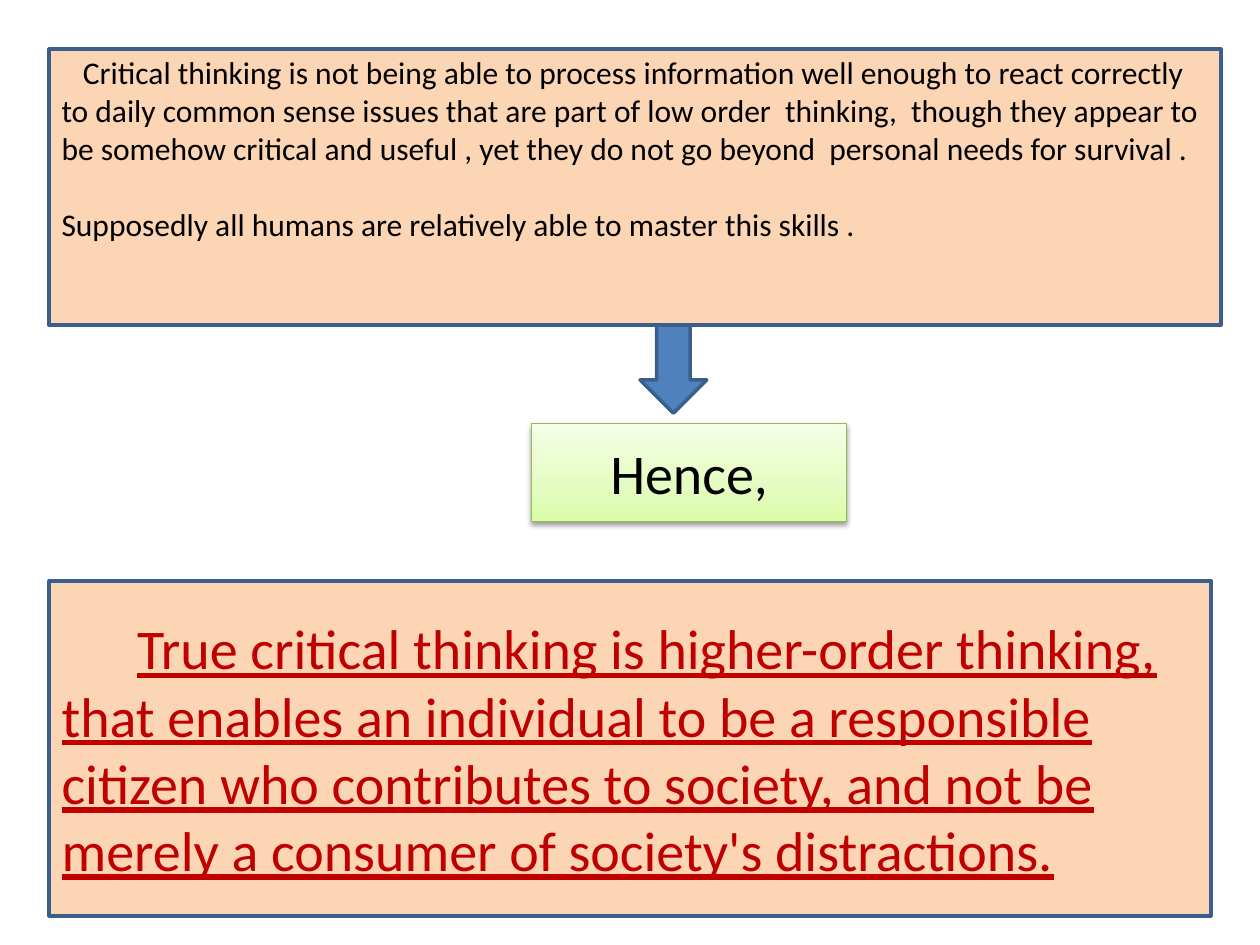
import copy

import pptx
import pptx.dml.color
import pptx.enum.shapes
import pptx.enum.text
import pptx.oxml
import pptx.oxml.ns
import pptx.util

Inches = pptx.util.Inches
Pt = pptx.util.Pt
SHAPES = pptx.enum.shapes.MSO_SHAPE
ALIGN = pptx.enum.text.PP_ALIGN
ANCHOR = pptx.enum.text.MSO_ANCHOR

COLORS = {
    "peach": "FCD5B5", "navy": "3A5F8C", "blue": "4F81BD",
    "green_line": "98B955", "black": "000000", "red": "C00000",
}
GREEN_STOPS = [(0, "DAFDA7"), (0.35, "E4FCC2"), (1, "F5FFE7")]


def rgb(value):
    return pptx.dml.color.RGBColor.from_string(value)


class SlideBuilder:
    def __init__(self, slide, font="Calibri"):
        self.slide = slide
        self.font = font

    def block(self, kind, place, fill=None, line="navy", weight=2):
        shape = self.slide.shapes.add_shape(kind, *map(Inches, place))
        shape.shadow.inherit = False
        if fill:
            shape.fill.solid()
            shape.fill.fore_color.rgb = rgb(COLORS[fill])
        shape.line.color.rgb = rgb(COLORS[line])
        shape.line.width = Pt(weight)
        return shape

    def gradient(self, shape, stops):
        """Fill from bottom to top with two or more (position, colour) stops."""
        shape.fill.gradient()
        shape.fill.gradient_angle = 90
        stop_list = shape._element.spPr.find(".//" + pptx.oxml.ns.qn("a:gsLst"))
        while len(stop_list) < len(stops):
            stop_list.append(copy.deepcopy(stop_list[-1]))
        for stop, (position, color) in zip(shape.fill.gradient_stops, stops):
            stop.position = position
            stop.color.rgb = rgb(color)

    def drop_shadow(self, shape):
        effects = shape._element.spPr.find(pptx.oxml.ns.qn("a:effectLst"))
        effects.append(pptx.oxml.parse_xml(
            f'<a:outerShdw {pptx.oxml.ns.nsdecls("a")} blurRad="{Pt(3.1)}" '
            f'dist="{Pt(1.6)}" dir="5400000" rotWithShape="0">'
            '<a:srgbClr val="000000"><a:alpha val="38000"/></a:srgbClr>'
            '</a:outerShdw>'))

    def add_text(self, shape, paragraphs, size, color="black", align=ALIGN.LEFT,
                 anchor=ANCHOR.MIDDLE, indent=0, gap=0, underline=None):
        """Indent the first paragraph and put gap points before each later one."""
        frame = shape.text_frame
        frame.word_wrap = True
        frame.vertical_anchor = anchor
        font_format = {"name": self.font, "size": Pt(size), "underline": underline}
        for index, text in enumerate(paragraphs):
            paragraph = frame.add_paragraph() if index else frame.paragraphs[0]
            paragraph.alignment = align
            if index:
                paragraph.space_before = Pt(gap)
            elif indent:
                paragraph._p.get_or_add_pPr().set("indent", str(Inches(indent)))
            run = paragraph.add_run()
            run.text = text
            for name, value in font_format.items():
                setattr(run.font, name, value)
            run.font.color.rgb = rgb(COLORS[color])


def main():
    deck = pptx.Presentation()
    deck.slide_width, deck.slide_height = Inches(10), Inches(7.5)
    builder = SlideBuilder(deck.slides.add_slide(deck.slide_layouts[6]))

    premise = builder.block(SHAPES.RECTANGLE, (0.39, 0.39, 9.3, 2.19), "peach")
    premise.text_frame.margin_top = Inches(0.03)
    builder.add_text(premise, [
        "Critical thinking is not being able to process information well enough "
        "to react correctly to daily common sense issues that are part of low "
        "order  thinking,  though they appear to be somehow critical and useful , "
        "yet they do not go beyond  personal needs for survival .",
        "Supposedly all humans are relatively able to master this skills .",
    ], 18, anchor=ANCHOR.TOP, indent=0.17, gap=22)

    hence = builder.block(SHAPES.RECTANGLE, (4.22, 3.36, 2.5, 0.78),
                          line="green_line", weight=0.75)
    builder.gradient(hence, GREEN_STOPS)
    builder.drop_shadow(hence)
    builder.add_text(hence, ["Hence,"], 32, align=ALIGN.CENTER)

    conclusion = builder.block(SHAPES.RECTANGLE, (0.39, 4.61, 9.22, 2.66), "peach")
    builder.add_text(conclusion, [
        "True critical thinking is higher-order thinking, that enables an "
        "individual to be a responsible citizen who contributes to society, and "
        "not be merely a consumer of society's distractions.",
    ], 32, color="red", indent=0.6, underline=True)

    builder.block(SHAPES.DOWN_ARROW, (5.08, 2.58, 0.53, 0.7), "blue")

    deck.save("out.pptx")


if __name__ == "__main__":
    main()
